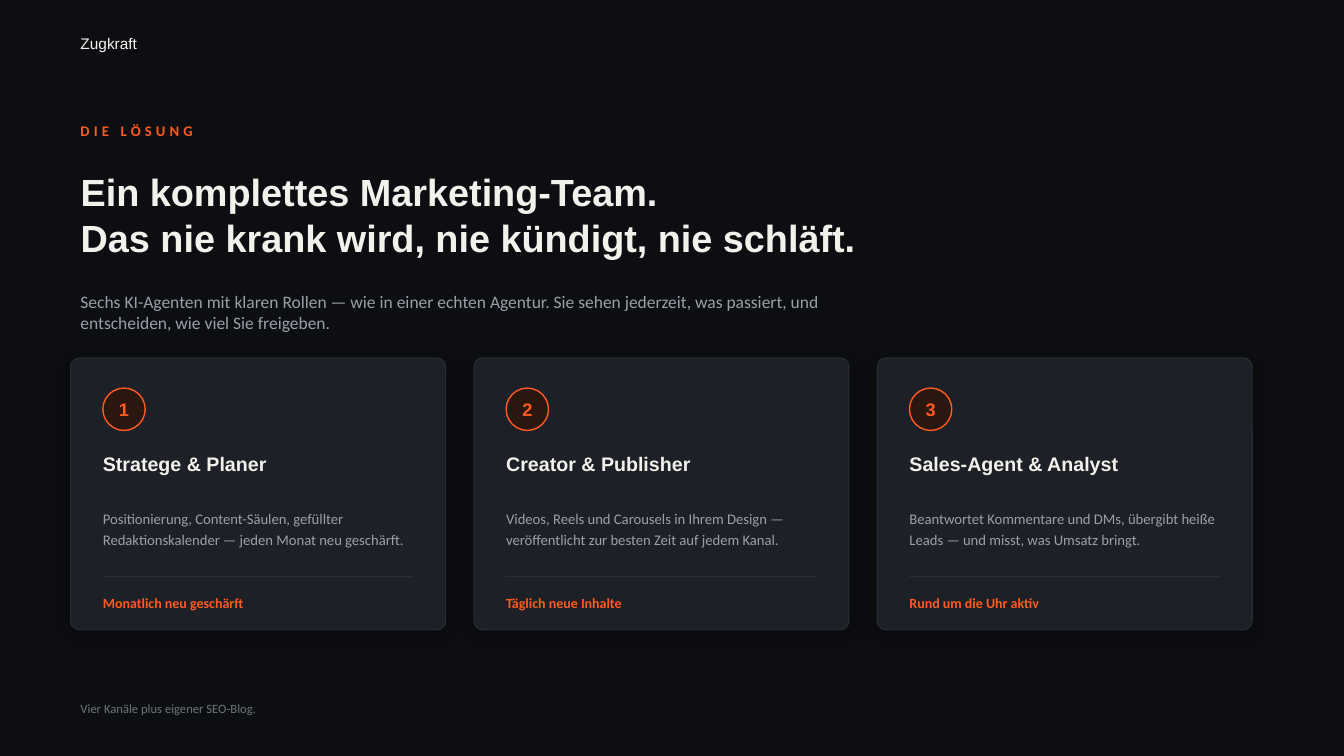
from dataclasses import dataclass

from lxml import etree
from pptx import Presentation
from pptx.dml.color import RGBColor
from pptx.enum.shapes import MSO_CONNECTOR, MSO_SHAPE
from pptx.enum.text import MSO_ANCHOR, MSO_AUTO_SIZE, PP_ALIGN
from pptx.oxml.ns import qn
from pptx.util import Emu, Pt

ROUNDED = MSO_SHAPE.ROUNDED_RECTANGLE
OVAL = MSO_SHAPE.OVAL
STRAIGHT = MSO_CONNECTOR.STRAIGHT
MIDDLE = MSO_ANCHOR.MIDDLE
NO_AUTOFIT = MSO_AUTO_SIZE.NONE
LEFT = PP_ALIGN.LEFT
CENTER = PP_ALIGN.CENTER

EMU_PER_PX = 9144  # 100 px to the inch
SLIDE_WIDTH, SLIDE_HEIGHT = 1333, 750
MARGIN = 70
TITLE_ONLY_LAYOUT = 5


@dataclass(frozen=True)
class TextStyle:
    size: float
    color: str
    font: str = "Calibri"
    bold: bool = False
    tracking: int = 0
    line_spacing: float = 1.0
    align: PP_ALIGN = LEFT


class Theme:
    background = "0D0E11"
    card = "1D2027"
    border = "2A2D35"
    accent = "FF5A1F"
    badge = "2A1710"
    light = "F3F1EC"
    muted = "9AA0AA"
    shadow = "000000"

    sender_text = TextStyle(11, light, "Arial")
    kicker_text = TextStyle(10.5, accent, bold=True, tracking=3)
    title_text = TextStyle(27, light, "Arial", True)
    lead_text = TextStyle(12.5, muted)
    number_text = TextStyle(13, accent, "Arial", True, align=CENTER)
    role_text = TextStyle(14, light, "Arial", True)
    detail_text = TextStyle(10.5, muted, line_spacing=1.2)
    rhythm_text = TextStyle(10, accent, bold=True)
    footnote_text = TextStyle(9, "6F747E")


CARDS = [
    ("Stratege & Planer",
     "Positionierung, Content-Säulen, gefüllter Redaktionskalender — jeden Monat neu geschärft.",
     "Monatlich neu geschärft"),
    ("Creator & Publisher",
     "Videos, Reels und Carousels in Ihrem Design — veröffentlicht zur besten Zeit auf jedem Kanal.",
     "Täglich neue Inhalte"),
    ("Sales-Agent & Analyst",
     "Beantwortet Kommentare und DMs, übergibt heiße Leads — und misst, was Umsatz bringt.",
     "Rund um die Uhr aktiv"),
]


def px(*lengths):
    return [Emu(length * EMU_PER_PX) for length in lengths]


def rgb(color):
    return RGBColor.from_string(color)


def write(shape, text, style, inset=(10, 5)):
    frame = shape.text_frame
    frame.text = text
    frame.word_wrap = True
    frame.auto_size = NO_AUTOFIT
    frame.vertical_anchor = MIDDLE
    frame.margin_left, frame.margin_top = px(*inset)
    frame.margin_right, frame.margin_bottom = px(*inset)
    for paragraph in frame.paragraphs:
        paragraph.alignment = style.align
        paragraph.line_spacing = style.line_spacing
        for run in paragraph.runs:
            run.font.size = Pt(style.size)
            run.font.name = style.font
            run.font.bold = style.bold
            run.font.color.rgb = rgb(style.color)
            if style.tracking:
                run._r.get_or_add_rPr().set("spc", str(style.tracking * 100))


def add_text(slide, box, text, style, inset=(10, 5)):
    write(slide.shapes.add_textbox(*px(*box)), text, style, inset)


def add_panel(slide, kind, box, fill, border, border_width):
    shape = slide.shapes.add_shape(kind, *px(*box))
    shape.shadow.inherit = False
    shape.fill.solid()
    shape.fill.fore_color.rgb = rgb(fill)
    shape.line.color.rgb = rgb(border)
    shape.line.width = Pt(border_width)
    return shape


def add_soft_shadow(shape):
    effects = shape._element.spPr.find(qn("a:effectLst"))
    shadow = etree.SubElement(effects, qn("a:outerShdw"), blurRad=str(Pt(12)),
                              dist=str(Pt(3)), dir="5400000", algn="ctr", rotWithShape="0")
    color = etree.SubElement(shadow, qn("a:srgbClr"), val=Theme.shadow)
    etree.SubElement(color, qn("a:alpha"), val="35000")


def add_divider(slide, left, top, width):
    line = slide.shapes.add_connector(STRAIGHT, *px(left, top, left + width, top))
    line.line.color.rgb = rgb(Theme.border)
    line.line.width = Pt(0.75)
    etree.SubElement(line._element.spPr, qn("a:effectLst"))


def add_heading(slide, left, top):
    add_text(slide, (left, top, 800, 30), "DIE LÖSUNG", Theme.kicker_text)
    title = slide.shapes.title
    title.left, title.top, title.width, title.height = px(left, top + 40, 1100, 115)
    write(title, "Ein komplettes Marketing-Team.\nDas nie krank wird, nie kündigt, nie schläft.",
          Theme.title_text)
    add_text(slide, (left, top + 170, 840, 50),
             "Sechs KI-Agenten mit klaren Rollen — wie in einer echten Agentur. "
             "Sie sehen jederzeit, was passiert, und entscheiden, wie viel Sie freigeben.",
             Theme.lead_text)


def add_card(slide, box, number, role, detail, rhythm):
    left, top, width, height = box
    padding = 32
    inner_left, inner_width = left + padding, width - 2 * padding

    card = add_panel(slide, ROUNDED, box, Theme.card, Theme.border, 0.75)
    card.adjustments[0] = 0.033
    add_soft_shadow(card)

    badge = add_panel(slide, OVAL, (inner_left, top + 30, 42, 42),
                      Theme.badge, Theme.accent, 1)
    write(badge, str(number), Theme.number_text, (0, 0))

    for offset, text_height, text, style in (
        (87, 36, role, Theme.role_text),
        (126, 85, detail, Theme.detail_text),
        (228, 30, rhythm, Theme.rhythm_text),
    ):
        add_text(slide, (inner_left, top + offset, inner_width, text_height),
                 text, style, (0, 0))
    add_divider(slide, inner_left, top + 217, inner_width)


def add_cards(slide, left, top):
    width, height, gap = 372, 270, 28
    for index, content in enumerate(CARDS):
        box = (left + index * (width + gap), top, width, height)
        add_card(slide, box, index + 1, *content)


def build_solution_slide(presentation):
    slide = presentation.slides.add_slide(presentation.slide_layouts[TITLE_ONLY_LAYOUT])
    slide.background.fill.solid()
    slide.background.fill.fore_color.rgb = rgb(Theme.background)
    add_text(slide, (MARGIN, 26, 300, 34), "Zugkraft", Theme.sender_text)
    add_heading(slide, MARGIN, 115)
    add_cards(slide, MARGIN, 355)
    add_text(slide, (MARGIN, 688, SLIDE_WIDTH - 2 * MARGIN, 30),
             "Vier Kanäle plus eigener SEO-Blog.", Theme.footnote_text)


def main():
    presentation = Presentation()
    presentation.slide_width, presentation.slide_height = px(SLIDE_WIDTH, SLIDE_HEIGHT)
    build_solution_slide(presentation)
    presentation.save("out.pptx")


if __name__ == "__main__":
    main()
